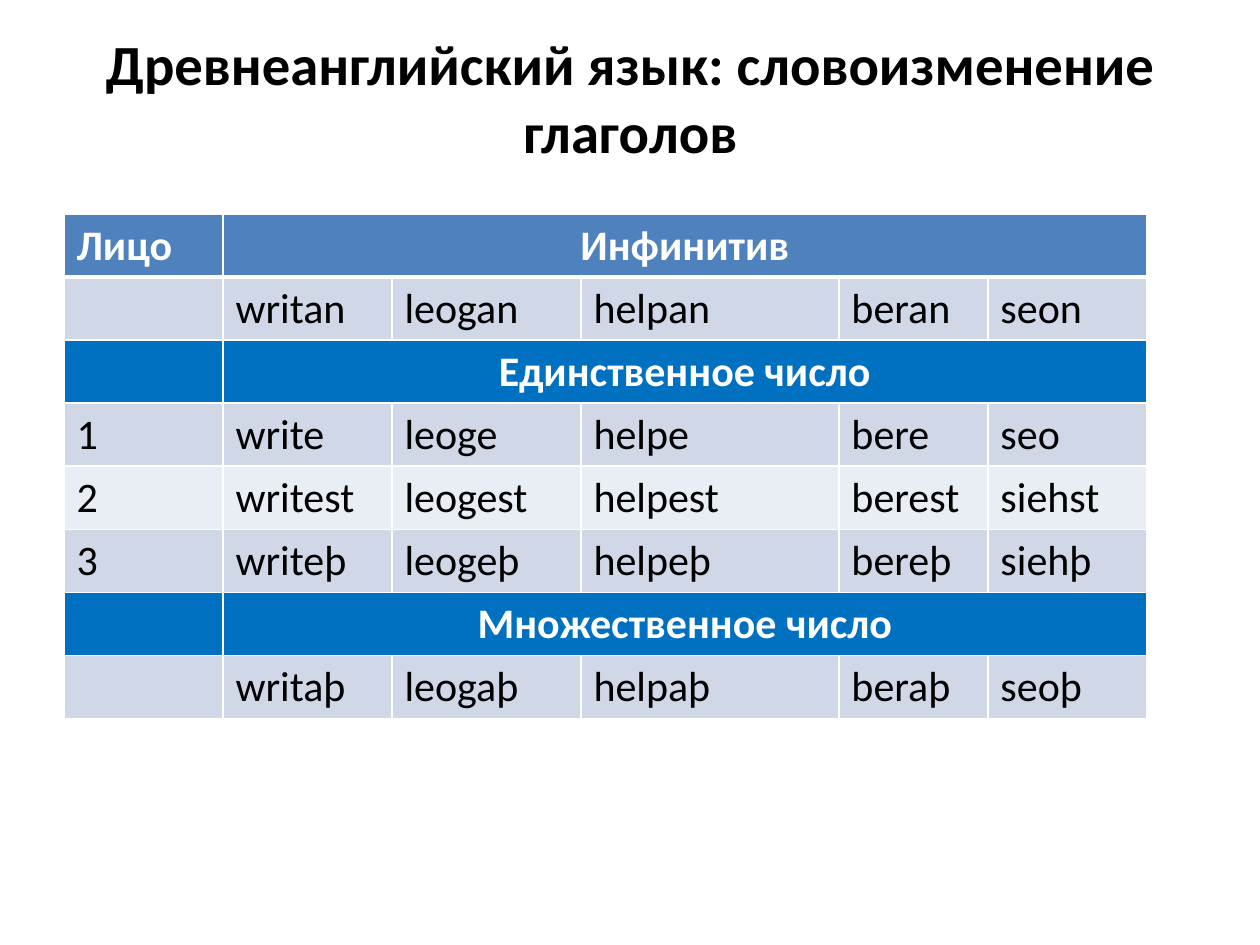
"""Build a slide with a table of Old English verb inflection."""
from lxml import etree
from pptx import Presentation
from pptx import util as u
from pptx.dml.color import RGBColor
from pptx.enum import text
from pptx.oxml import ns

PX = 914400 / 126
BLACK = RGBColor(0x00, 0x00, 0x00)
WHITE = RGBColor(0xFF, 0xFF, 0xFF)
HEADER = RGBColor(0x4F, 0x81, 0xBD)
SECTION = RGBColor(0x00, 0x70, 0xC0)
BAND_DARK = RGBColor(0xD0, 0xD8, 0xE8)
BAND_LIGHT = RGBColor(0xE9, 0xED, 0xF4)
COLUMNS = [159, 169, 189, 258, 149, 159]
ROW_HEIGHT = 52
ROWS = [
    (HEADER, ["Лицо", "Инфинитив"]),
    (BAND_DARK, ["", "writan", "leogan", "helpan", "beran", "seon"]),
    (SECTION, ["", "Единственное число"]),
    (BAND_DARK, ["1", "write", "leoge", "helpe", "bere", "seo"]),
    (BAND_LIGHT, ["2", "writest", "leogest", "helpest", "berest", "siehst"]),
    (BAND_DARK, ["3", "writeþ", "leogeþ", "helpeþ", "bereþ", "siehþ"]),
    (SECTION, ["", "Множественное число"]),
    (BAND_DARK, ["", "writaþ", "leogaþ", "helpaþ", "beraþ", "seoþ"]),
]


def px(n):
    return u.Emu(round(n * PX))


def add_run(p, words, size, color, bold):
    r = p.add_run()
    r.text = words
    r.font.name = "Calibri"
    r.font.size = u.Pt(size)
    r.font.bold = bold
    r.font.color.rgb = color


prs = Presentation()
prs.slide_width, prs.slide_height = px(1260), px(945)
s = prs.slides.add_slide(prs.slide_layouts[6])

title = s.shapes.add_textbox(px(64), px(38), px(1133), px(117))
tf = title.text_frame
tf.word_wrap = True
tf.vertical_anchor = text.MSO_ANCHOR.MIDDLE
p = tf.paragraphs[0]
p.alignment = text.PP_ALIGN.CENTER
add_run(p, "Древнеанглийский язык: словоизменение глаголов", 32.4, BLACK, True)

frame = s.shapes.add_table(len(ROWS), len(COLUMNS), px(64), px(214),
                           px(sum(COLUMNS)), px(ROW_HEIGHT * len(ROWS)))
table = frame.table
for column, width in zip(table.columns, COLUMNS):
    column.width = px(width)

for i, (fill, words) in enumerate(ROWS):
    table.rows[i].height = px(ROW_HEIGHT)
    banner = len(words) == 2
    if banner:
        table.cell(i, 1).merge(table.cell(i, len(COLUMNS) - 1))
    for j in range(len(COLUMNS)):
        cell = table.cell(i, j)
        tcPr = cell._tc.get_or_add_tcPr()
        for side in "LRTB":
            thick = (i, side) in [(0, "B"), (1, "T")]
            ln = etree.SubElement(tcPr, ns.qn("a:ln" + side), w=str(u.Pt(3 if thick else 1)))
            line_fill = etree.SubElement(ln, ns.qn("a:solidFill"))
            etree.SubElement(line_fill, ns.qn("a:srgbClr"), val=str(WHITE))
        cell.fill.solid()
        cell.fill.fore_color.rgb = fill
        if j < len(words) and words[j]:
            p = cell.text_frame.paragraphs[0]
            if banner and j == 1:
                p.alignment = text.PP_ALIGN.CENTER
            add_run(p, words[j], 24, WHITE if banner else BLACK, banner)

prs.save("out.pptx")
